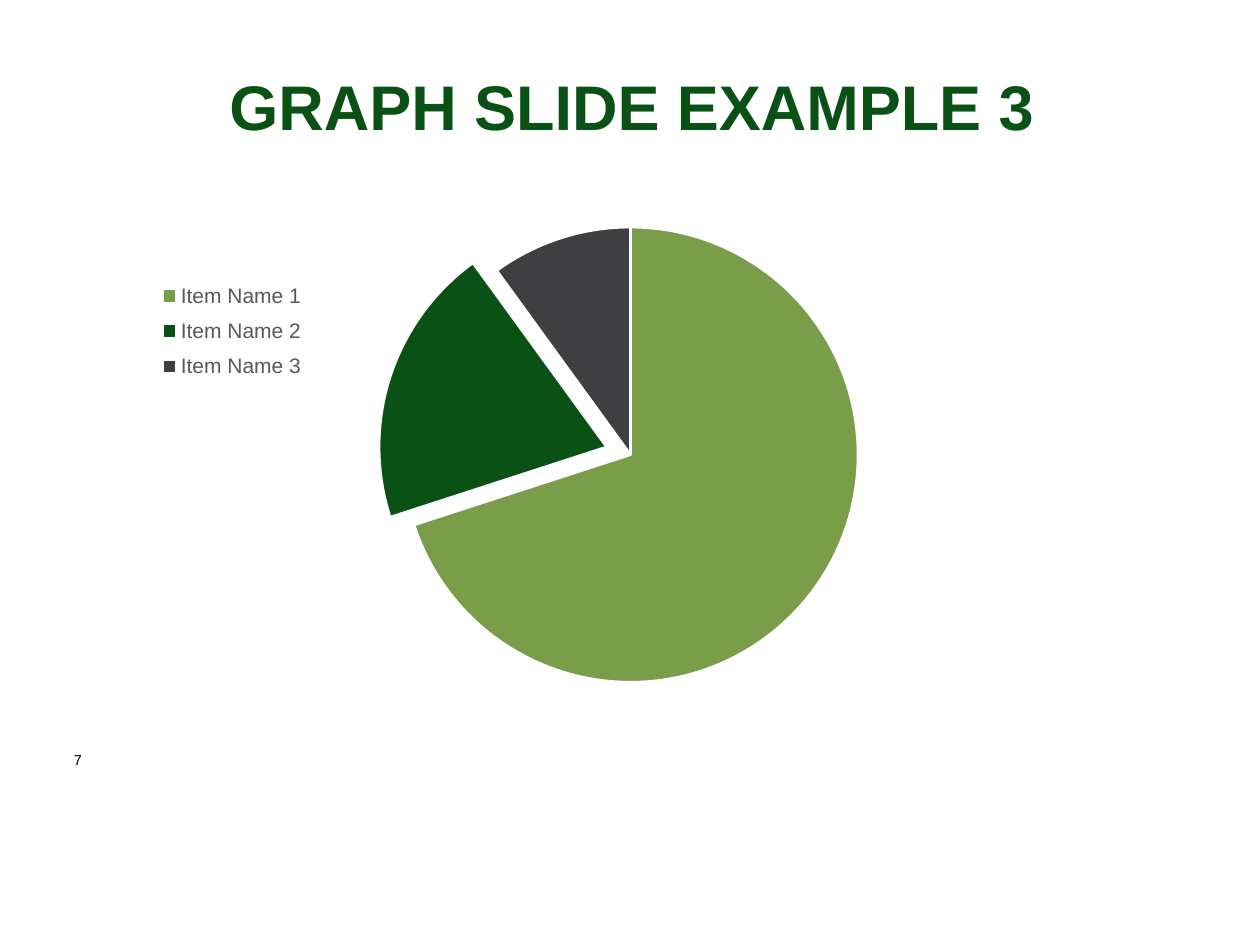
from lxml import etree
from pptx import Presentation
from pptx.chart.data import CategoryChartData
from pptx.dml.color import RGBColor
from pptx.enum.chart import XL_CHART_TYPE, XL_LEGEND_POSITION
from pptx.enum.text import MSO_ANCHOR, PP_ALIGN
from pptx.oxml.ns import qn
from pptx.util import Cm, Pt

PIE = XL_CHART_TYPE.PIE
BOTTOM = XL_LEGEND_POSITION.BOTTOM
TOP, MIDDLE = MSO_ANCHOR.TOP, MSO_ANCHOR.MIDDLE
LEFT, CENTER = PP_ALIGN.LEFT, PP_ALIGN.CENTER
GREEN = "095115"


def rgb(value):
    return RGBColor.from_string(value)


def write(tf, text, size=12, color="000000", bold=False, align=LEFT, font="Arial"):
    p = tf.paragraphs[0]
    p.alignment = align
    r = p.add_run()
    r.text = text
    r.font.name = font
    r.font.size = Pt(size)
    r.font.bold = bold
    r.font.color.rgb = rgb(color)


def set_layout(parent, after, inner=False, **box):
    for old in parent.findall(qn("c:layout")):
        parent.remove(old)
    layout = etree.Element(qn("c:layout"))
    manual = etree.SubElement(layout, qn("c:manualLayout"))
    values = {"xMode": "edge", "yMode": "edge", **box}
    if inner:
        values = {"layoutTarget": "inner", **values}
    for key, value in values.items():
        etree.SubElement(manual, qn(f"c:{key}")).set("val", str(value))
    if after is None:
        parent.insert(0, layout)
    else:
        after.addnext(layout)


class Deck:
    font = "Arial"

    def __init__(self, prs):
        self.s = prs.slides.add_slide(prs.slide_layouts[6])

    def text(self, text, x, y, w, h, anchor=TOP, **fmt):
        sp = self.s.shapes.add_textbox(Cm(x), Cm(y), Cm(w), Cm(h))
        tf = sp.text_frame
        tf.word_wrap = True
        tf.vertical_anchor = anchor
        write(tf, text, font=self.font, **fmt)

    def pie(self, name, slices, x, y, w, h, exploded, explosion):
        data = CategoryChartData()
        data.categories = [label for label, _, _ in slices]
        data.add_series(name, [value for _, value, _ in slices])
        chart = self.s.shapes.add_chart(PIE, Cm(x), Cm(y), Cm(w), Cm(h), data).chart
        chart.has_title = False
        chart.font.name = self.font
        chart.font.size = Pt(10)
        chart.font.color.rgb = rgb("000000")
        plot = chart.plots[0]
        plot.vary_by_categories = True
        points = plot.series[0].points
        for i, (_, _, color) in enumerate(slices):
            fmt = points[i].format
            fmt.fill.solid()
            fmt.fill.fore_color.rgb = rgb(color)
            fmt.line.color.rgb = rgb("FFFFFF")
            fmt.line.width = Pt(1.5)
        dpt = plot.series[0]._element.findall(qn("c:dPt"))[exploded]
        offset = etree.Element(qn("c:explosion"))
        offset.set("val", str(explosion))
        dpt.find(qn("c:spPr")).addprevious(offset)
        area = chart._chartSpace.chart.plotArea
        set_layout(area, None, inner=True, x=0.3, y=0.03, w=0.4, h=0.86)
        self.legend(chart)

    def legend(self, chart):
        chart.has_legend = True
        legend = chart.legend
        legend.position = BOTTOM
        legend.include_in_layout = False
        legend.font.name = self.font
        legend.font.size = Pt(12)
        legend.font.color.rgb = rgb("595959")
        el = legend._element
        set_layout(el, el.find(qn("c:legendPos")), x=0.08, y=0.12, w=0.14, h=0.22)


def main():
    prs = Presentation()
    prs.slide_width, prs.slide_height = Cm(25.4), Cm(19.05)
    deck = Deck(prs)
    deck.text("7", 1.24, 15.01, 1.09, 1.02, size=8.2)
    slices = [
        ("Item Name 1", 70, "799D49"),
        ("Item Name 2", 20, GREEN),
        ("Item Name 3", 10, "3F3F41"),
    ]
    deck.pie("Series 1", slices, 1.24, 4.19, 22.94, 10.82, exploded=1, explosion=11)
    deck.text("GRAPH SLIDE EXAMPLE 3", 2.24, 1.12, 21, 2, anchor=MIDDLE,
              size=36, color=GREEN, bold=True, align=CENTER)
    prs.save("out.pptx")


if __name__ == "__main__":
    main()
